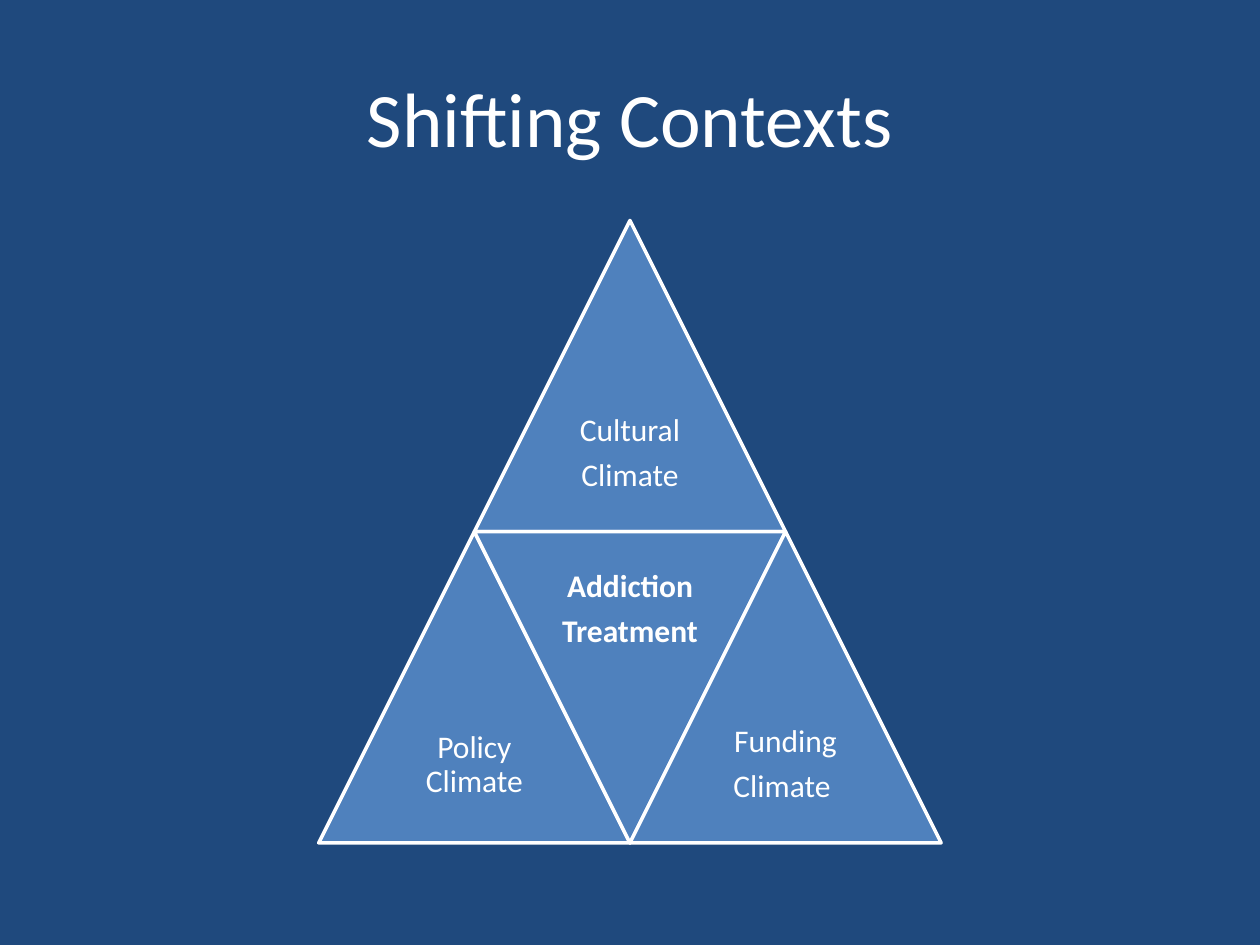
import pptx
import pptx.dml.color
import pptx.enum.shapes
import pptx.enum.text
import pptx.util

NAVY = pptx.dml.color.RGBColor(0x1F, 0x49, 0x7D)
BLUE = pptx.dml.color.RGBColor(0x4F, 0x81, 0xBD)
WHITE = pptx.dml.color.RGBColor(0xFF, 0xFF, 0xFF)

deck = pptx.Presentation()
deck.slide_width = pptx.util.Inches(10)
deck.slide_height = pptx.util.Inches(7.5)
slide = deck.slides.add_slide(deck.slide_layouts[6])
slide.background.fill.solid()
slide.background.fill.fore_color.rgb = NAVY


def add_text(left, top, width, height, lines, size, bold=False):
    """Add a centred white text box with one paragraph per line."""
    box = slide.shapes.add_textbox(*(round(v) for v in (left, top, width, height)))
    frame = box.text_frame
    frame.word_wrap = True
    frame.vertical_anchor = pptx.enum.text.MSO_ANCHOR.MIDDLE
    frame.text = "\n".join(lines)
    for paragraph in frame.paragraphs:
        paragraph.alignment = pptx.enum.text.PP_ALIGN.CENTER
        paragraph.font.name = "Calibri"
        paragraph.font.size = pptx.util.Pt(size)
        paragraph.font.bold = bold
        paragraph.font.color.rgb = WHITE
    return frame


# Title
add_text(deck.slide_width * 0.05, deck.slide_height * 0.04,
         deck.slide_width * 0.9, deck.slide_height / 6, ["Shifting Contexts"], 44)

# Large triangle: two rows of small triangles, each one side wide and high
side = pptx.util.Inches(2.47)
pyramid_left = deck.slide_width / 2 - side
pyramid_top = pptx.util.Inches(1.75)

# Column and row in units of one side, whether it points down, label lines
climates = [
    (0.5, 0, False, ["Cultural", "Climate"]),
    (0, 1, False, ["Policy Climate"]),
    (0.5, 1, True, ["Addiction", "Treatment"]),
    (1, 1, False, ["Funding", "Climate "]),
]
for column, row, points_down, label in climates:
    left = pyramid_left + column * side
    top = pyramid_top + row * side
    triangle = slide.shapes.add_shape(
        pptx.enum.shapes.MSO_SHAPE.ISOSCELES_TRIANGLE,
        round(left), round(top), side, side)
    triangle.shadow.inherit = False
    triangle.rotation = 180 if points_down else 0
    triangle.fill.solid()
    triangle.fill.fore_color.rgb = BLUE
    triangle.line.color.rgb = WHITE
    triangle.line.width = pptx.util.Pt(2)

    # The label fills the half of the triangle nearest its base
    label_top = top if points_down else top + side / 2
    frame = add_text(left + side / 4, label_top, side / 2, side / 2,
                     label, 18, bold=points_down)
    frame.margin_left = frame.margin_right = pptx.util.Inches(0.07)
    frame.margin_top = frame.margin_bottom = pptx.util.Inches(0.07)
    for paragraph in frame.paragraphs:
        paragraph.line_spacing = 0.9
        paragraph.space_after = pptx.util.Pt(6.3)

deck.save("out.pptx")
